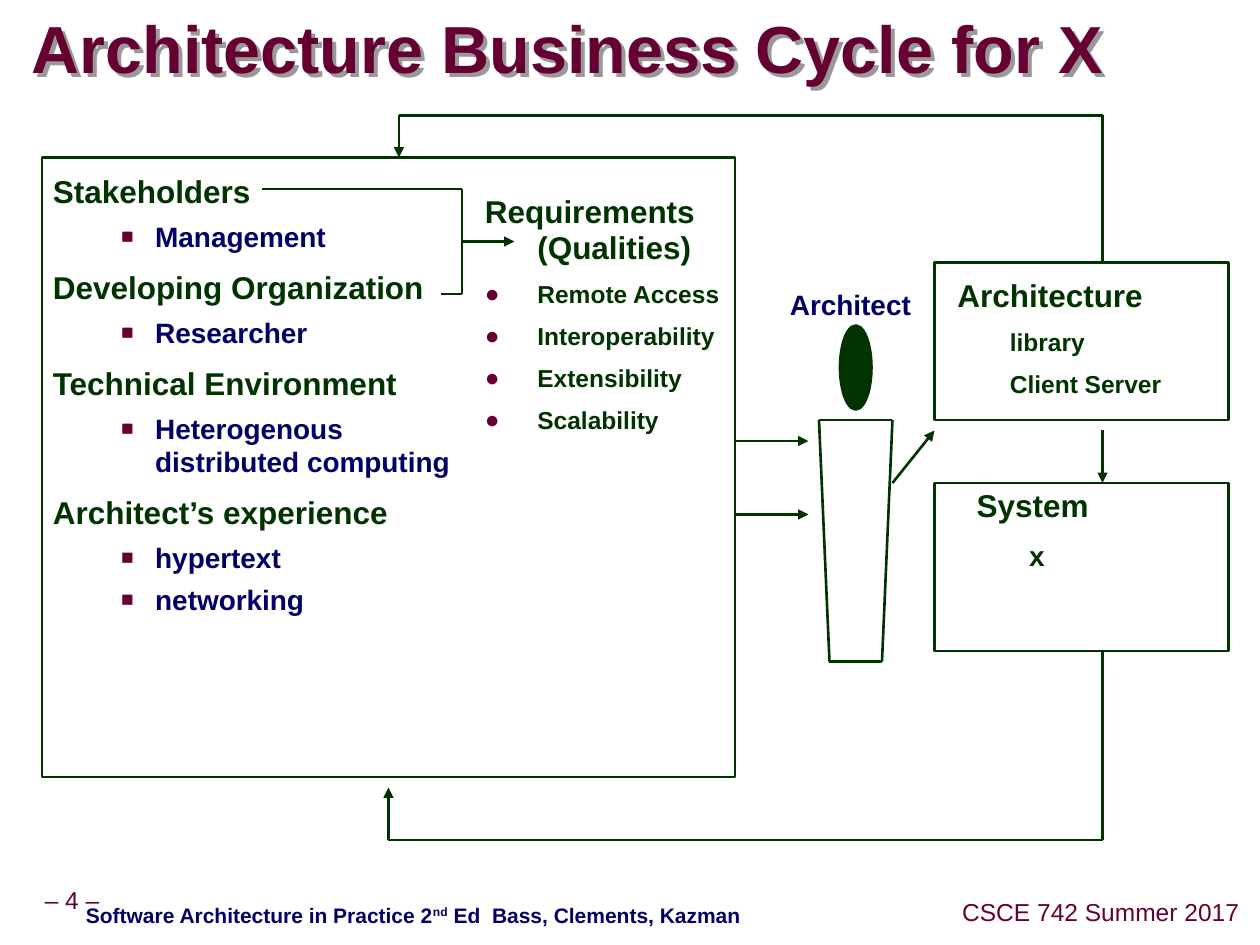
"""Build the Architecture Business Cycle slide."""
from lxml import etree
from pptx import Presentation
from pptx.dml.color import RGBColor
from pptx.enum.shapes import MSO_CONNECTOR, MSO_SHAPE
from pptx.enum.text import MSO_ANCHOR, MSO_AUTO_SIZE, PP_ALIGN
from pptx.oxml.ns import qn
from pptx.util import Pt

MAROON = RGBColor(0x66, 0x00, 0x33)
GREEN = RGBColor(0x00, 0x33, 0x00)
NAVY = RGBColor(0x00, 0x00, 0x66)
SHADOW = RGBColor(0x99, 0x99, 0x99)
LEFT, CENTER = PP_ALIGN.LEFT, PP_ALIGN.CENTER
TOP, MIDDLE = MSO_ANCHOR.TOP, MSO_ANCHOR.MIDDLE
NO_AUTOFIT = MSO_AUTO_SIZE.NONE
STRAIGHT = MSO_CONNECTOR.STRAIGHT
RECTANGLE, OVAL = MSO_SHAPE.RECTANGLE, MSO_SHAPE.OVAL

STYLES = {
    "title": {"size": 38, "color": MAROON, "spacing": 0.87},
    "heading": {"size": 18, "color": GREEN, "spacing": 0.95, "before": 10, "margin": 30, "indent": -30},
    "item": {"size": 16, "color": NAVY, "before": 5, "margin": 58.5, "indent": -19.5,
             "bullet": "■", "bullet_size": 75, "level": 1},
    "quality": {"size": 14, "color": GREEN, "spacing": 0.95, "before": 8, "margin": 30, "indent": -30,
                "bullet": "●", "bullet_size": 100},
    "detail": {"size": 14, "color": GREEN, "spacing": 0.95, "before": 8, "margin": 30},
    "system": {"size": 16, "color": GREEN, "spacing": 0.95, "before": 9, "margin": 30},
    "label": {"size": 16, "color": NAVY, "spacing": 0.9, "align": CENTER},
    "footer": {"size": 14, "color": MAROON, "spacing": 0.9, "align": CENTER, "bold": False},
    "source": {"size": 12, "color": NAVY},
}


def write_text(shape, box, lines, inset=(7.2, 3.6), anchor=TOP, wrap=True):
    """Place a shape and fill it with styled paragraphs."""
    shape.left, shape.top, shape.width, shape.height = map(Pt, box)
    frame = shape.text_frame
    horizontal, vertical = map(Pt, inset)
    frame_format = {"margin_left": horizontal, "margin_right": horizontal, "margin_top": vertical,
                    "margin_bottom": vertical, "vertical_anchor": anchor, "word_wrap": wrap,
                    "auto_size": NO_AUTOFIT}
    for name, value in frame_format.items():
        setattr(frame, name, value)
    for index, (style_name, text) in enumerate(lines):
        style = STYLES[style_name]
        paragraph = frame.add_paragraph() if index else frame.paragraphs[0]
        properties = paragraph._p.get_or_add_pPr()
        properties.set("marL", str(Pt(style.get("margin", 0))))
        properties.set("indent", str(Pt(style.get("indent", 0))))
        if "bullet" in style:
            bullet_color = etree.SubElement(properties, qn("a:buClr"))
            etree.SubElement(bullet_color, qn("a:srgbClr"), val=str(MAROON))
            etree.SubElement(properties, qn("a:buSzPct"), val=str(style["bullet_size"] * 1000))
            etree.SubElement(properties, qn("a:buFont"), typeface="Arial")
            etree.SubElement(properties, qn("a:buChar"), char=style["bullet"])
        else:
            etree.SubElement(properties, qn("a:buNone"))
        paragraph_format = {"level": style.get("level", 0), "alignment": style.get("align", LEFT),
                            "line_spacing": style.get("spacing", 1.0),
                            "space_before": Pt(style.get("before", 0) if index else 0)}
        for name, value in paragraph_format.items():
            setattr(paragraph, name, value)
        for position, part in enumerate(text.split("^")):
            run = paragraph.add_run()
            run.text = part
            font_format = {"name": "Arial", "size": Pt(style["size"]), "bold": style.get("bold", True)}
            for name, value in font_format.items():
                setattr(run.font, name, value)
            run.font.color.rgb = style["color"]
            if position % 2:
                run._r.get_or_add_rPr().set("baseline", "30000")


presentation = Presentation()
presentation.slide_width, presentation.slide_height = Pt(720), Pt(540)
slide = presentation.slides.add_slide(presentation.slide_layouts[1])
title, body = slide.placeholders

write_text(title, (18, 0, 654, 60), [("title", "Architecture Business Cycle for X")], (0, 0), MIDDLE)
effects = etree.SubElement(title._element.spPr, qn("a:effectLst"))
title_shadow = etree.SubElement(effects, qn("a:outerShdw"), dist=str(Pt(3.2)), dir="2700000",
                                algn="ctr", rotWithShape="0")
etree.SubElement(title_shadow, qn("a:srgbClr"), val=str(SHADOW))

write_text(body, (23, 96.5, 253.5, 335.5), [
    ("heading", "Stakeholders"),
    ("item", "Management"),
    ("heading", "Developing Organization"),
    ("item", "Researcher"),
    ("heading", "Technical Environment"),
    ("item", "Heterogenous distributed computing"),
    ("heading", "Architect’s experience"),
    ("item", "hypertext"),
    ("item", "networking"),
])

TEXT_BOXES = [
    ((270, 108, 174, 120), [("heading", "Requirements (Qualities)"), ("quality", "Remote Access"),
                            ("quality", "Interoperability"), ("quality", "Extensibility"),
                            ("quality", "Scalability")]),
    ((540, 156, 169, 78), [("heading", "Architecture"), ("detail", "library"), ("detail", "Client Server")]),
    ((551, 276, 169, 78), [("heading", "System"), ("system", "x")]),
    ((42, 512, 528, 22), [("source", "Software Architecture in Practice 2^nd^ Ed  Bass, Clements, Kazman")]),
]
for box, lines in TEXT_BOXES:
    write_text(slide.shapes.add_textbox(0, 0, 0, 0), box, lines)

CENTERED_LABELS = [
    ((448, 163, 76, 24.5), TOP, "label", "Architect"),
    ((17.5, 504, 47.5, 22), MIDDLE, "footer", "– 4 –"),
    ((546, 511, 166, 22), MIDDLE, "footer", "CSCE 742 Summer 2017"),
]
for box, anchor, style_name, text in CENTERED_LABELS:
    write_text(slide.shapes.add_textbox(0, 0, 0, 0), box, [(style_name, text)], (3.6, 3.6), anchor, False)

OUTLINES = [
    (RECTANGLE, (24, 90, 396, 354)),
    (RECTANGLE, (534, 150, 168, 90)),
    (RECTANGLE, (534, 276, 168, 96)),
    (OVAL, (480, 186, 18, 48)),
]
for kind, box in OUTLINES:
    shape = slide.shapes.add_shape(kind, *map(Pt, box))
    shape.shadow.inherit = False
    shape.line.color.rgb = GREEN
    shape.line.width = Pt(1.5)
    if kind == OVAL:
        shape.fill.solid()
        shape.fill.fore_color.rgb = GREEN
    else:
        shape.fill.background()

LINES = [
    (264, 108, 264, 168), (264, 168, 252, 168), (264, 108, 150, 108),
    (630, 372, 630, 480), (222, 480, 630, 480),
    (630, 150, 630, 66), (630, 66, 228, 66),
    (468, 240, 510, 240), (474, 378, 504, 378), (474, 378, 468, 240), (504, 378, 510, 240),
]
ARROWS = [
    (264, 138, 294, 138), (420, 252, 462, 252), (420, 294, 462, 294), (222, 480, 222, 450),
    (630, 246, 630, 276), (228, 66, 228, 90), (510, 276, 534, 246),
]
for ends in LINES + ARROWS:
    connector = slide.shapes.add_connector(STRAIGHT, *map(Pt, ends))
    connector.line.color.rgb = GREEN
    connector.line.width = Pt(1.5)
    if ends in ARROWS:
        etree.SubElement(connector.line._get_or_add_ln(), qn("a:tailEnd"), type="triangle")
    etree.SubElement(connector._element.spPr, qn("a:effectLst"))

presentation.save("out.pptx")
